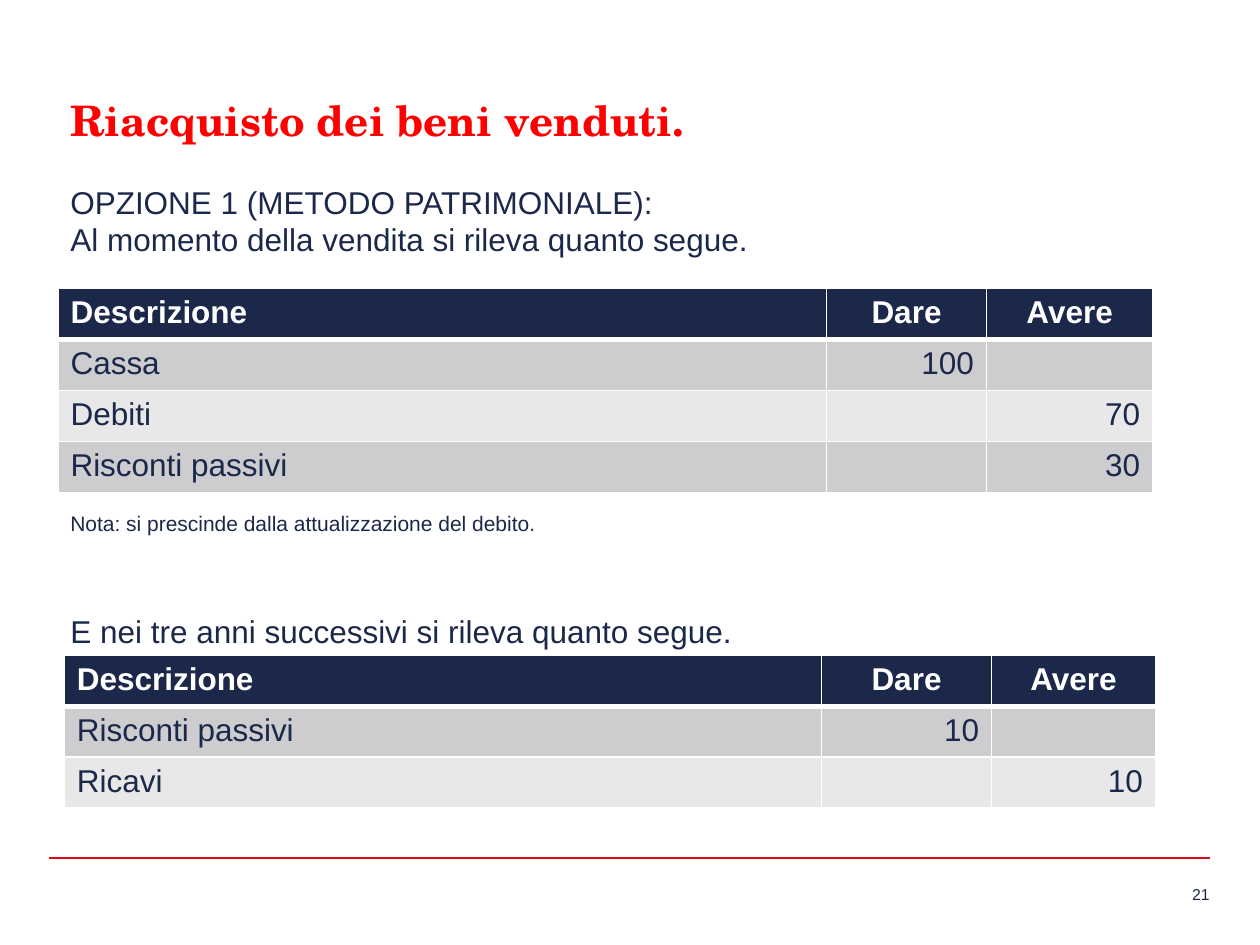
from pptx import Presentation
from pptx.dml.color import RGBColor
from pptx.enum.shapes import MSO_CONNECTOR as Connector
from pptx.enum.text import MSO_ANCHOR as Anchor, PP_ALIGN as Align
from pptx.oxml.ns import qn
from pptx.util import Inches, Pt
from lxml.etree import SubElement

NAVY = RGBColor(0x1B, 0x28, 0x49)
RED = RGBColor(0xFF, 0x00, 0x00)
RULE_RED = RGBColor(0xE3, 0x06, 0x13)
WHITE = RGBColor(0xFF, 0xFF, 0xFF)
BANDS = (RGBColor(0xE8, 0xE8, 0xE9), RGBColor(0xCD, 0xCD, 0xD0))

LEFT = 0.46
ROW_HEIGHT = 0.405
HEADER = ("Descrizione", "Dare", "Avere")

# text, size, space before: the larger spaces leave room for the tables
BODY = (
    ("OPZIONE 1 (METODO PATRIMONIALE):", 18, 0),
    ("Al momento della vendita si rileva quanto segue.", 18, 0),
    ("Nota: si prescinde dalla attualizzazione del debito.", 12, 144),
    ("E nei tre anni successivi si rileva quanto segue.", 18, 44),
)
SALE_ENTRIES = (("Cassa", "100", ""), ("Debiti", "", "70"),
                ("Risconti passivi", "", "30"))
YEARLY_ENTRIES = (("Risconti passivi", "10", ""), ("Ricavi", "", "10"))


def style(paragraph, size, color, align=Align.LEFT, bold=False, name="Arial"):
    paragraph.alignment = align
    font = paragraph.font
    font.size, font.bold, font.name = Pt(size), bold, name
    font.color.rgb = color


def add_title(slide, text):
    title = slide.shapes.title
    title.left, title.top = Inches(LEFT), Inches(0.7)
    title.width, title.height = Inches(9.08), Inches(0.5)
    frame = title.text_frame
    frame.text = text
    frame.vertical_anchor = Anchor.TOP
    style(frame.paragraphs[0], 24, RED, bold=True, name="TeX Gyre Schola")


def add_body(slide):
    box = slide.shapes.add_textbox(Inches(LEFT), Inches(1.4), Inches(8.69), Inches(3.84))
    frame = box.text_frame
    frame.word_wrap = True
    frame.text = "\n".join(text for text, _, _ in BODY)
    for paragraph, (_, size, space) in zip(frame.paragraphs, BODY):
        style(paragraph, size, NAVY, Align.JUSTIFY)
        if space:
            paragraph.space_before = Pt(space)


def add_borders(cell, top, bottom):
    properties = cell._tc.get_or_add_tcPr()
    for side, width in (("L", 1), ("R", 1), ("T", top), ("B", bottom)):
        line = SubElement(properties, qn(f"a:ln{side}"), w=str(Pt(width)))
        fill = SubElement(line, qn("a:solidFill"))
        SubElement(fill, qn("a:srgbClr"), val=str(WHITE))


def add_ledger(slide, left, top, widths, entries):
    """Journal table: header row, then banded rows with amounts at right."""
    rows = (HEADER, *entries)
    table = slide.shapes.add_table(
        len(rows), len(widths), Inches(left), Inches(top),
        Inches(sum(widths)), Inches(ROW_HEIGHT * len(rows))).table
    for column, width in zip(table.columns, widths):
        column.width = Inches(width)
    for r, values in enumerate(rows):
        is_header = r == 0
        amount_align = Align.CENTER if is_header else Align.RIGHT
        for c, value in enumerate(values):
            cell = table.cell(r, c)
            add_borders(cell, 3 if r == 1 else 1, 3 if is_header else 1)
            cell.fill.solid()
            cell.fill.fore_color.rgb = NAVY if is_header else BANDS[r % 2]
            cell.text_frame.text = value
            style(cell.text_frame.paragraphs[0], 18, WHITE if is_header else NAVY,
                  amount_align if c else Align.LEFT, is_header)


def add_footer(slide, number):
    rule = slide.shapes.add_connector(
        Connector.STRAIGHT, Inches(0.39), Inches(6.81), Inches(9.6), Inches(6.81))
    rule.line.color.rgb = RULE_RED
    rule.line.width = Pt(1)
    SubElement(rule._element.spPr, qn("a:effectLst"))
    box = slide.shapes.add_textbox(Inches(8.91), Inches(7.02), Inches(0.69), Inches(0.15))
    frame = box.text_frame
    frame.word_wrap = True
    frame.margin_left = frame.margin_right = frame.margin_top = frame.margin_bottom = 0
    frame.text = number
    style(frame.paragraphs[0], 9, NAVY, Align.RIGHT)


def main():
    presentation = Presentation()
    presentation.slide_width, presentation.slide_height = Inches(10), Inches(7.5)
    slide = presentation.slides.add_slide(presentation.slide_layouts[5])
    add_footer(slide, "21")
    add_title(slide, "Riacquisto dei beni venduti.")
    add_body(slide)
    add_ledger(slide, LEFT, 2.29, (6.1, 1.27, 1.32), SALE_ENTRIES)
    add_ledger(slide, 0.51, 5.2, (6.01, 1.35, 1.3), YEARLY_ENTRIES)
    presentation.save("out.pptx")


if __name__ == "__main__":
    main()
